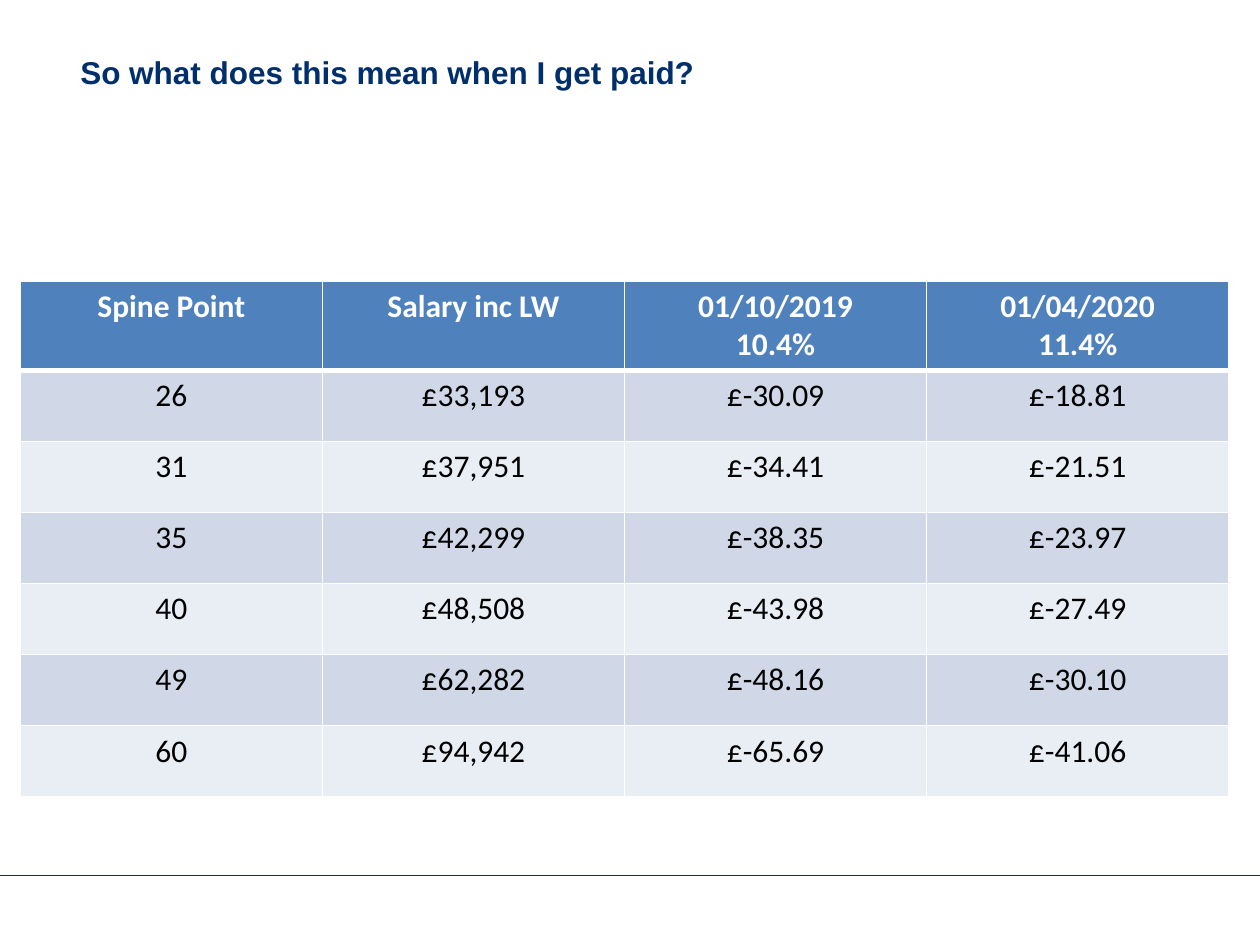
from lxml.etree import SubElement as Sub
from pptx import Presentation
from pptx.dml.color import RGBColor as Rgb
from pptx.enum.shapes import MSO_CONNECTOR as Conn
from pptx.enum.text import MSO_AUTO_SIZE as Fit, PP_ALIGN as Align
from pptx.oxml.ns import qn
from pptx.util import Cm, Pt

NAVY, BLUE, WHITE, BLACK = "002F6C", "4F81BD", "FFFFFF", "000000"
BANDS = ("D0D8E8", "E9EDF4")
ROWS = [
    ("Spine Point", "Salary inc LW", "01/10/2019\n10.4%", "01/04/2020\n11.4%"),
    ("26", "£33,193", "£-30.09", "£-18.81"),
    ("31", "£37,951", "£-34.41", "£-21.51"),
    ("35", "£42,299", "£-38.35", "£-23.97"),
    ("40", "£48,508", "£-43.98", "£-27.49"),
    ("49", "£62,282", "£-48.16", "£-30.10"),
    ("60", "£94,942", "£-65.69", "£-41.06"),
]


def tint(code):
    """Turn a hex string into a colour."""
    return Rgb.from_string(code)


def write(frame, text, font="Calibri", size=18, color=BLACK, bold=False, align=Align.LEFT):
    """Fill a text frame, one paragraph for each line of text."""
    frame.text = text
    for para in frame.paragraphs:
        para.alignment = align
        for run in para.runs:
            face = run.font
            face.name, face.size, face.bold = font, Pt(size), bold
            face.color.rgb = tint(color)


def edge(cell, **sides):
    """Draw white cell borders, each side given as a width in points."""
    props = cell._tc.get_or_add_tcPr()
    for spot, (side, width) in enumerate(sides.items()):
        line = props.makeelement(qn("a:ln" + side), {"w": str(Pt(width))})
        fill = Sub(line, qn("a:solidFill"))
        Sub(fill, qn("a:srgbClr"), val=WHITE)
        props.insert(spot, line)


def title(slide, left, top, width, height):
    """Place the slide heading."""
    box = slide.shapes.add_textbox(Cm(left), Cm(top), Cm(width), Cm(height))
    frame = box.text_frame
    write(frame, "So what does this mean when I get paid?", font="Arial", color=NAVY, bold=True)
    frame.word_wrap = False
    frame.auto_size = Fit.SHAPE_TO_FIT_TEXT


def grid(slide, left, top, width, height, head=1.6):
    """Place the pay table with a header and banded rows."""
    count, cols = len(ROWS), len(ROWS[0])
    table = slide.shapes.add_table(
        count, cols, Cm(left), Cm(top), Cm(width), Cm(height)).table
    for col in table.columns:
        col.width = Cm(width / cols)
    for r, row in enumerate(ROWS):
        first = r == 0
        table.rows[r].height = Cm(head if first else (height - head) / (count - 1))
        for c, text in enumerate(row):
            cell = table.cell(r, c)
            cell.fill.solid()
            cell.fill.fore_color.rgb = tint(BLUE if first else BANDS[(r - 1) % 2])
            write(cell.text_frame, text, color=WHITE if first else BLACK,
                  bold=first, align=Align.CENTER)
            edge(cell, L=1, R=1, T=3 if r == 1 else 1, B=3 if first else 1)


def footer(slide, left, top, width):
    """Draw the rule across the foot of the slide."""
    line = slide.shapes.add_connector(
        Conn.STRAIGHT, Cm(left), Cm(top), Cm(left + width), Cm(top))
    line.line.color.rgb = tint(NAVY)
    line.line.width = Pt(1)
    Sub(line._element.spPr, qn("a:effectLst"))


def main():
    """Build and save the slide."""
    deck = Presentation()
    deck.slide_width, deck.slide_height = Cm(25.4), Cm(19.05)
    slide = deck.slides.add_slide(deck.slide_layouts[6])
    footer(slide, 0, 17.65, 25.4)
    grid(slide, 0.41, 5.66, 24.36, 10.2)
    title(slide, 1.37, 0.94, 13.51, 1.02)
    deck.save("out.pptx")


if __name__ == "__main__":
    main()
